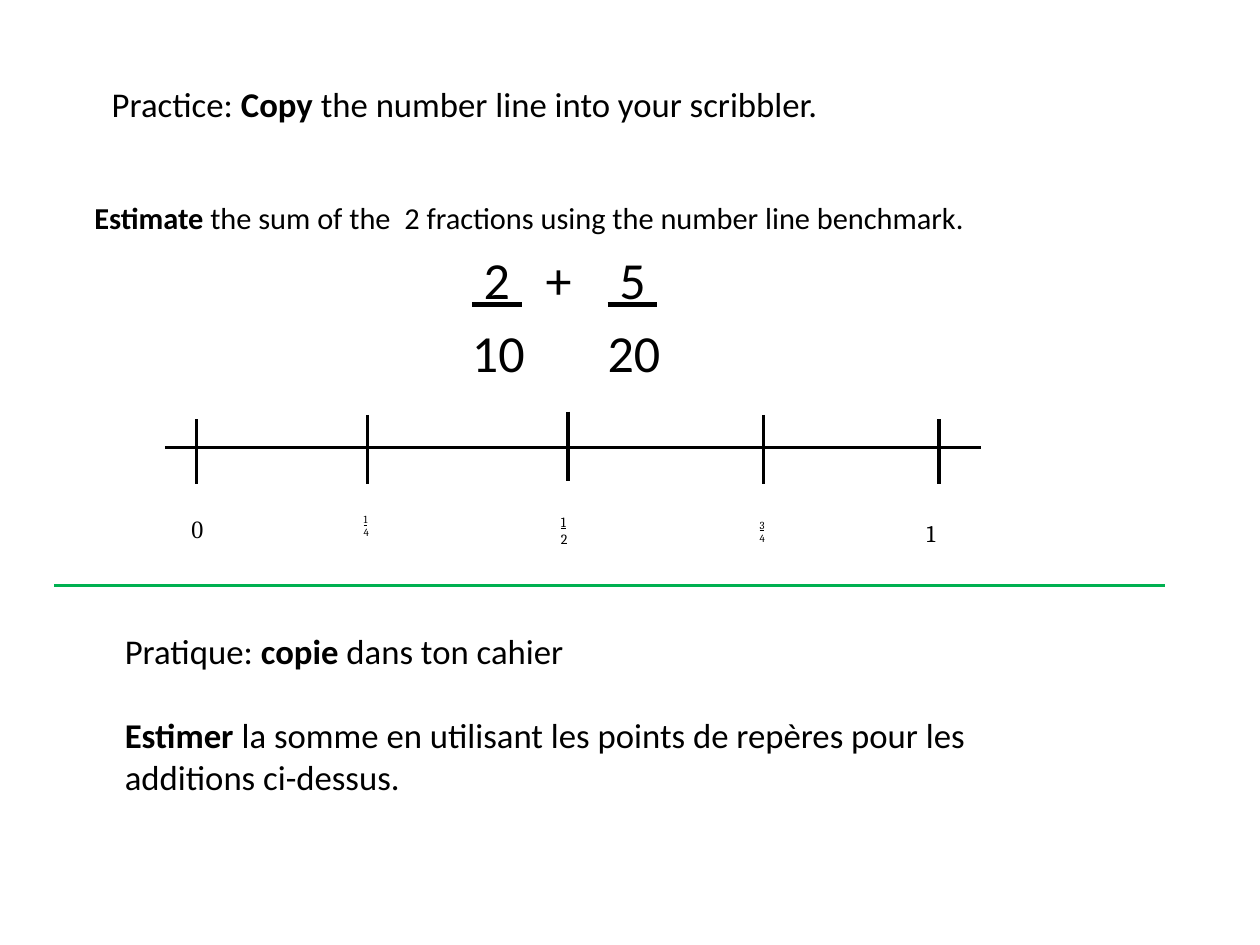
import dataclasses

import pptx
import pptx.dml.color
import pptx.enum.shapes
import pptx.enum.text
import pptx.oxml
import pptx.oxml.ns
import pptx.util

Pt = pptx.util.Pt


@dataclasses.dataclass(frozen=True)
class Theme:
    ink: str = "000000"
    divider: str = "00B050"
    body_font: str = "Calibri"
    number_font: str = "Cambria"
    zero_font: str = "Times New Roman"
    heading: float = 32
    instruction: float = 28
    sum: float = 48
    line: float = 3


THEME = Theme()


def add_text(slide, box, paragraphs, *, size, font=THEME.body_font, color=THEME.ink,
             inset=(0, 0), line_spacing=None, gap=0):
    """Each paragraph is a list of (text, style), style being "", "bold" or "underline"."""
    shape = slide.shapes.add_textbox(*map(Pt, box))
    frame = shape.text_frame
    frame.word_wrap = True
    frame.auto_size = pptx.enum.text.MSO_AUTO_SIZE.NONE
    frame.margin_left = frame.margin_right = Pt(inset[0])
    frame.margin_top = frame.margin_bottom = Pt(inset[1])
    for index, runs in enumerate(paragraphs):
        paragraph = frame.add_paragraph() if index else frame.paragraphs[0]
        paragraph.line_spacing = line_spacing
        paragraph.space_before = Pt(gap if index else 0)
        for text, style in runs:
            run = paragraph.add_run()
            run.text = text
            run.font.name = font
            run.font.size = Pt(size)
            run.font.bold = style == "bold"
            run.font.underline = style == "underline"
            run.font.color.rgb = pptx.dml.color.RGBColor.from_string(color)
    return shape


def add_line(slide, start, end, color=THEME.ink):
    connector = slide.shapes.add_connector(
        pptx.enum.shapes.MSO_CONNECTOR.STRAIGHT, *map(Pt, (*start, *end)))
    connector.line.width = Pt(THEME.line)
    connector.line.color.rgb = pptx.dml.color.RGBColor.from_string(color)
    properties = connector._element.spPr
    properties.append(pptx.oxml.parse_xml(
        f'<a:effectLst {pptx.oxml.ns.nsdecls("a")}/>'))
    return connector


def add_english_task(slide, box):
    left, top, width, height = box
    add_text(slide, (left + 16, top, width - 16, 45),
             [[("Practice: ", ""), ("Copy ", "bold"),
               ("the number line into your scribbler.", "")]], size=THEME.heading)
    add_text(slide, (left, top + 111, width, 40),
             [[("Estimate", "bold"),
               (" the sum of the  2 fractions using the number line benchmark.", "")]],
             size=THEME.instruction, line_spacing=0.9)


def add_fraction_sum(slide, box):
    left, top, width, height = box
    fraction_width = 60
    for x, numerator, denominator in ((left, "2", "10"),
                                      (left + width - fraction_width, "5", "20")):
        add_text(slide, (x, top, fraction_width, height),
                 [[(f" {numerator} ", "underline")], [(denominator, "")]],
                 size=THEME.sum, line_spacing=0.9, gap=16)
    add_text(slide, (left + 68, top, 36, 55), [[("+", "")]],
             size=THEME.sum, line_spacing=0.9)


def add_number_line(slide, box):
    left, top, width, height = box
    axis = top + 33
    add_line(slide, (left, axis), (left + width, axis))
    # Tick x, top and bottom; label x, y, parts, size and font
    marks = (
        (29, 7, 67, 17, 90, ["0"], 23, THEME.zero_font),
        (187, 3, 67, 176, 90, ["1", "4"], 10, THEME.number_font),
        (371.5, 0, 64, 358, 90, ["1", "2"], 13, THEME.number_font),
        (552, 3, 67, 541, 95, ["3", "4"], 10, THEME.number_font),
        (713.5, 7, 67, 695, 95, ["1"], 22, THEME.number_font),
    )
    for x, tick_top, tick_bottom, label_x, label_y, parts, size, font in marks:
        add_line(slide, (left + x, top + tick_top), (left + x, top + tick_bottom))
        styles = ["underline", ""] if len(parts) == 2 else [""]
        add_text(slide, (left + label_x, top + label_y, 50, height - label_y),
                 [[run] for run in zip(parts, styles)],
                 size=size, font=font, inset=(7.2, 3.6))


def add_french_task(slide, box):
    add_text(slide, box,
             [[("Pratique: ", ""), ("copie", "bold"), (" dans ton cahier", "")],
              [("Estimer", "bold"),
               (" la somme en utilisant les points de repères pour les "
                "additions ci-dessus.", "")]],
             size=THEME.heading, inset=(7.2, 3.6), gap=39)


def main():
    presentation = pptx.Presentation()
    presentation.slide_width = Pt(1161.36)
    presentation.slide_height = Pt(871.2)
    slide = presentation.slides.add_slide(presentation.slide_layouts[6])

    # English half
    add_english_task(slide, (87, 76, 980, 155))
    add_fraction_sum(slide, (435, 234.5, 185, 130))
    add_number_line(slide, (152, 379.5, 752, 140))

    # Divider between the languages
    add_line(slide, (50, 540), (1073.5, 540), THEME.divider)

    # French half
    add_french_task(slide, (108, 577, 856, 201))

    presentation.save("out.pptx")


if __name__ == "__main__":
    main()
